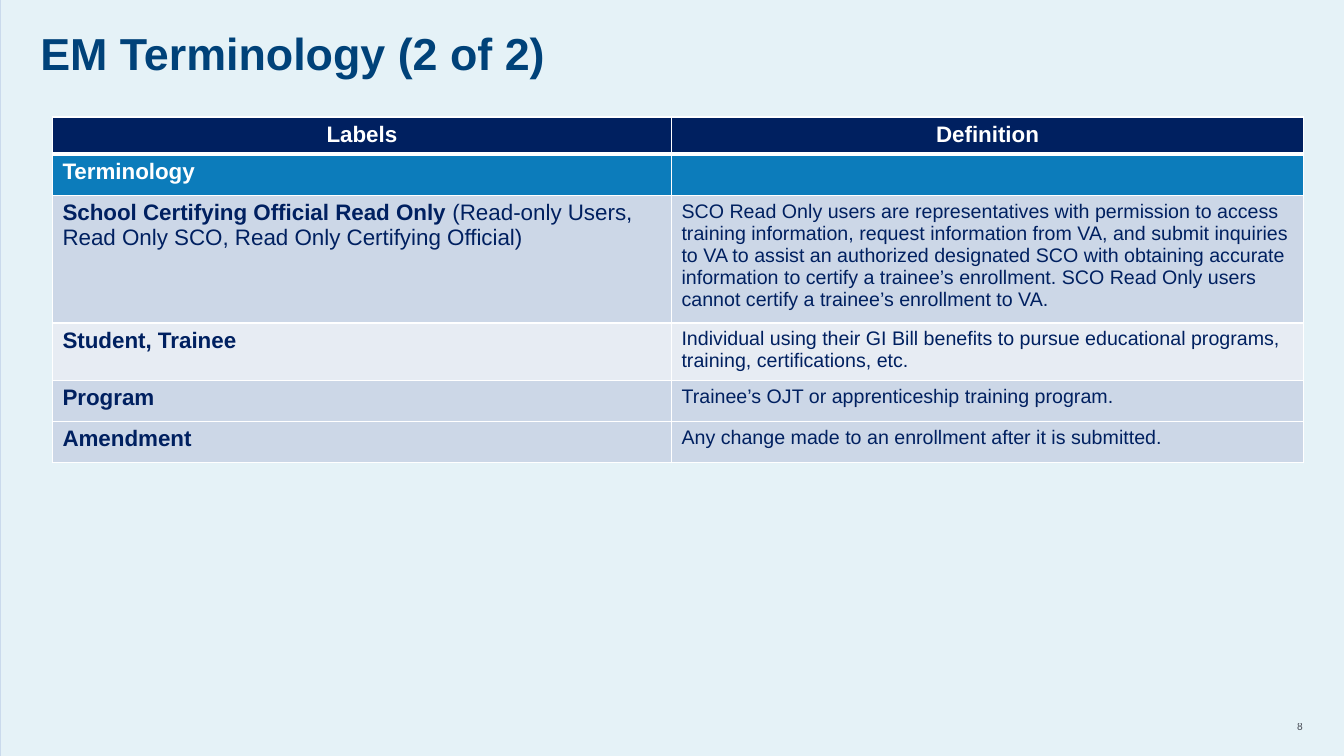
from dataclasses import dataclass

from lxml.etree import SubElement
from pptx import Presentation
from pptx.dml.color import RGBColor
from pptx.enum.shapes import MSO_SHAPE as Shape
from pptx.enum.text import MSO_ANCHOR as Anchor, PP_ALIGN as Align
from pptx.oxml.ns import qn
from pptx.util import Emu, Pt

PX = 9144  # 100 px to the inch
NAVY, WHITE = "002060", "FFFFFF"
BLUE, BAND, PALE_BAND = "0C7CBB", "CCD7E7", "E7ECF3"
COLUMN_WIDTHS = (614, 627)


@dataclass(frozen=True)
class Span:
    text: str
    size: int = 16
    bold: bool = True
    color: str = NAVY
    font: str = "Arial"


@dataclass(frozen=True)
class Row:
    height: int
    fill: str
    cells: tuple[tuple[Span, ...], ...]
    align: Align = Align.LEFT
    bottom_border: int = 1


def px(length: int) -> Emu:
    return Emu(length * PX)


def rgb(color: str) -> RGBColor:
    return RGBColor.from_string(color)


def add_spans(para, spans: tuple[Span, ...], align: Align = Align.LEFT) -> None:
    para.alignment = align
    for span in spans:
        run = para.add_run()
        run.text = span.text
        run.font.name = span.font
        run.font.size = Pt(span.size)
        run.font.bold = span.bold
        run.font.color.rgb = rgb(span.color)


def add_text(page, left: int, top: int, width: int, height: int, span: Span,
             align: Align, anchor: Anchor, inset: int = 0):
    box = page.shapes.add_textbox(px(left), px(top), px(width), px(height))
    frame = box.text_frame
    frame.word_wrap = True
    frame.vertical_anchor = anchor
    frame.margin_left = frame.margin_right = 0
    frame.margin_top = frame.margin_bottom = px(inset)
    para = frame.paragraphs[0]
    add_spans(para, (span,), align)
    return para


def set_borders(cell, bottom: int) -> None:
    properties = cell._tc.get_or_add_tcPr()
    widths = {"a:lnL": 1, "a:lnR": 1, "a:lnT": 1, "a:lnB": bottom}
    for place, (tag, width) in enumerate(widths.items()):
        line = SubElement(properties, qn(tag), w=str(Pt(width)))
        fill = SubElement(line, qn("a:solidFill"))
        SubElement(fill, qn("a:srgbClr"), val=WHITE)
        properties.insert(place, line)  # borders come before the cell fill


def add_terms(page, left: int, top: int, rows: tuple[Row, ...]) -> None:
    height = sum(row.height for row in rows)
    table = page.shapes.add_table(len(rows), len(COLUMN_WIDTHS), px(left), px(top),
                                  px(sum(COLUMN_WIDTHS)), px(height)).table
    for column, width in zip(table.columns, COLUMN_WIDTHS):
        column.width = px(width)
    for index, row in enumerate(rows):
        table.rows[index].height = px(row.height)
        for cell, spans in zip(table.rows[index].cells, row.cells):
            cell.fill.solid()
            cell.fill.fore_color.rgb = rgb(row.fill)
            set_borders(cell, row.bottom_border)
            add_spans(cell.text_frame.paragraphs[0], spans, row.align)


def term(height: int, fill: str, label: str, definition: str, aliases: str = "") -> Row:
    names = (Span(label),)
    if aliases:
        names += (Span(aliases, bold=False),)
    return Row(height, fill, (names, (Span(definition, 14, False),)))


ROWS = (
    Row(36, NAVY, ((Span("Labels", color=WHITE),), (Span("Definition", color=WHITE),)),
        Align.CENTER, 3),
    Row(41, BLUE, ((Span("Terminology", color=WHITE),), ())),
    term(119, BAND, "School Certifying Official Read Only ",
         "SCO Read Only users are representatives with permission to access training "
         "information, request information from VA, and submit inquiries to VA to assist "
         "an authorized designated SCO with obtaining accurate information to certify a "
         "trainee’s enrollment. SCO Read Only users cannot certify a trainee’s enrollment "
         "to VA.",
         "(Read-only Users, Read Only SCO, Read Only Certifying Official)"),
    term(54, PALE_BAND, "Student, Trainee",
         "Individual using their GI Bill benefits to pursue educational programs, "
         "training, certifications, etc."),
    term(41, BAND, "Program", "Trainee’s OJT or apprenticeship training program."),
    term(41, BAND, "Amendment", "Any change made to an enrollment after it is submitted."),
)


def main() -> None:
    deck = Presentation()
    deck.slide_width, deck.slide_height = px(1333), px(750)
    page = deck.slides.add_slide(deck.slide_layouts[6])

    # Background and the panel over it
    page.background.fill.solid()
    page.background.fill.fore_color.rgb = rgb("C7D7EB")
    panel = page.shapes.add_shape(Shape.RECTANGLE, px(1), 0, px(1332), px(750))
    panel.shadow.inherit = False
    panel.fill.solid()
    panel.fill.fore_color.rgb = rgb("E5F2F7")
    panel.line.fill.background()

    # Page number, slightly transparent
    number = add_text(page, 1250, 709, 42, 23, Span("8", 8, False, "1A1D28", "Calibri"),
                      Align.RIGHT, Anchor.MIDDLE)
    for color in number._p.iter(qn("a:srgbClr")):
        SubElement(color, qn("a:alpha"), val="75000")

    # Title
    title = add_text(page, 40, 31, 1250, 63,
                     Span("EM Terminology (2 of 2)", 32, True, "004279"),
                     Align.LEFT, Anchor.TOP, 5)
    title.line_spacing = 0.8

    # Table of terms
    add_terms(page, 52, 116, ROWS)

    deck.save("out.pptx")


if __name__ == "__main__":
    main()
